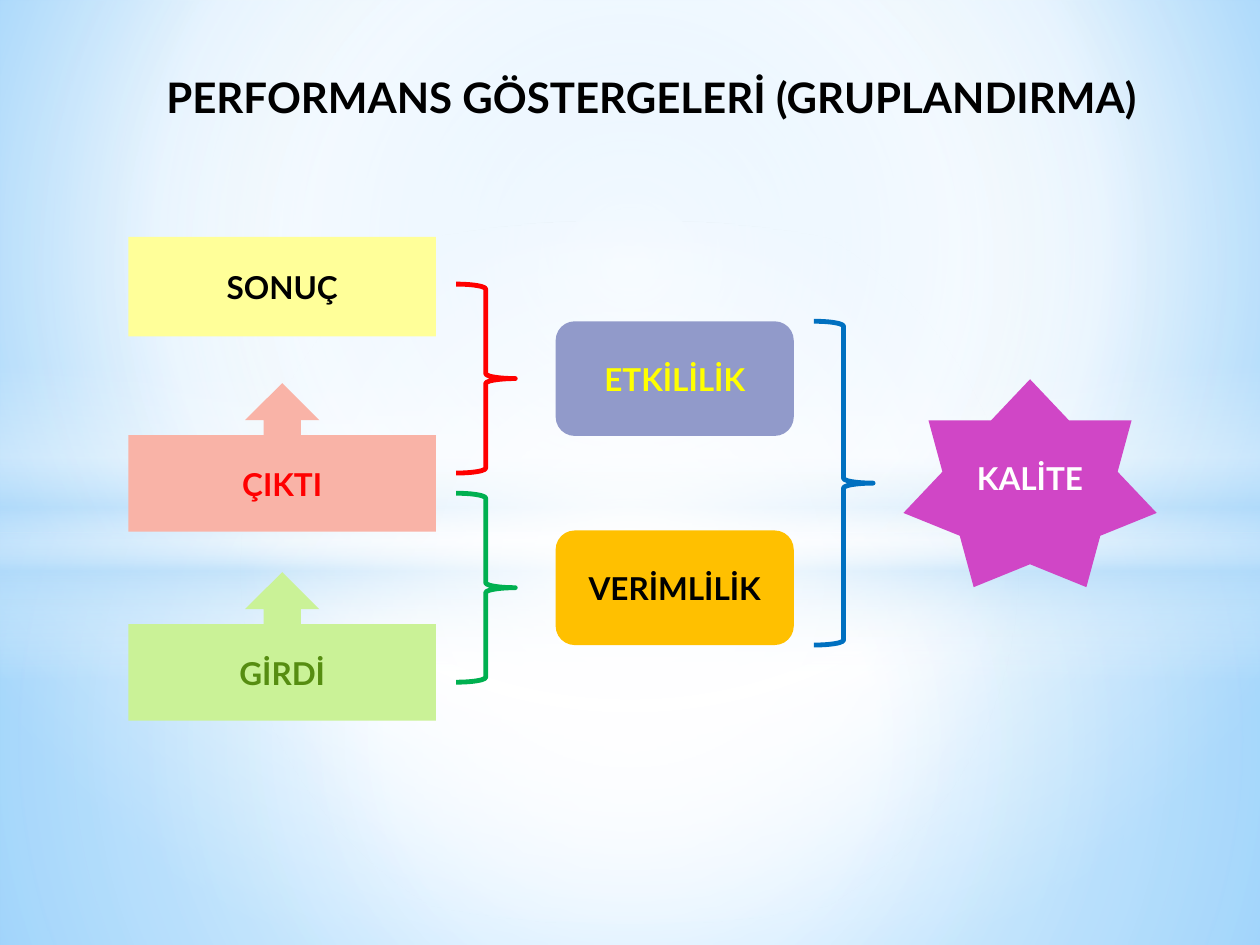
"""Build the slide that groups performance indicators into effectiveness, efficiency and quality."""
from lxml import etree
from pptx import Presentation
from pptx.dml.color import RGBColor
from pptx.enum.shapes import MSO_SHAPE
from pptx.enum.text import MSO_ANCHOR, PP_ALIGN
from pptx.oxml.ns import qn
from pptx.util import Inches, Pt

RECT, OVAL, ROUNDED = MSO_SHAPE.RECTANGLE, MSO_SHAPE.OVAL, MSO_SHAPE.ROUNDED_RECTANGLE
CALLOUT, BRACE, STAR = MSO_SHAPE.UP_ARROW_CALLOUT, MSO_SHAPE.RIGHT_BRACE, MSO_SHAPE.STAR_7_POINT
CENTER, LEFT = PP_ALIGN.CENTER, PP_ALIGN.LEFT
MIDDLE = MSO_ANCHOR.MIDDLE

FONT = "Lato"
BLACK, WHITE = RGBColor(0, 0, 0), RGBColor(0xFF, 0xFF, 0xFF)
RED, YELLOW = RGBColor(0xFF, 0, 0), RGBColor(0xFF, 0xFF, 0)
BLUE, GREEN = RGBColor(0, 0x70, 0xC0), RGBColor(0, 0xB0, 0x50)
CREAM, SALMON = RGBColor(0xFF, 0xFF, 0x99), RGBColor(0xF9, 0xB3, 0xA7)
LIME, OLIVE = RGBColor(0xCA, 0xF2, 0x97), RGBColor(0x56, 0x8D, 0x11)
AMBER, LAVENDER = RGBColor(0xFF, 0xC0, 0), RGBColor(0x91, 0x9A, 0xCA)
MAGENTA = RGBColor(0xD0, 0x46, 0xC6)
SKY, PALE_SKY = RGBColor(0x9E, 0xD5, 0xFF), RGBColor(0xB4, 0xDC, 0xFA)
DEEP_SKY = RGBColor(0x5B, 0xB9, 0xFF)

WIDTH, HEIGHT = 10, 7.5
HORIZON = 4.23
CENTRE_FOCUS = (50, 50, 50, 50)

TITLE = "PERFORMANS GÖSTERGELERİ (GRUPLANDIRMA)"
BACKDROP = [(0, SKY, 100), (60, WHITE, 100), (100, DEEP_SKY, 100)]
BACKDROP_FOCUS = (20, 10, 20, 60)
# kind, top, height, stops as (position, colour, opacity), focus or None for a vertical blend
GLOWS = [
    (RECT, HORIZON, HEIGHT - HORIZON,
     [(0, WHITE, 91), (37, WHITE, 76), (100, PALE_SKY, 79)], CENTRE_FOCUS),
    (RECT, 0, HORIZON,
     [(0, WHITE, 89), (48, WHITE, 62), (100, PALE_SKY, 79)], CENTRE_FOCUS),
    (RECT, 2.9, 2.5,
     [(0, WHITE, 0), (29, WHITE, 30), (45, PALE_SKY, 40),
      (55, WHITE, 26), (65, PALE_SKY, 60), (100, WHITE, 0)], None),
    (OVAL, 1.75, 5.58, [(0, WHITE, 100), (54, WHITE, 0)], CENTRE_FOCUS),
]

STAGE_X, STAGE_W = 1.02, 2.44
STAGES = [
    ("GİRDİ", CALLOUT, 4.54, 1.18, LIME, OLIVE),
    ("ÇIKTI", CALLOUT, 3.04, 1.18, SALMON, RED),
    ("SONUÇ", RECT, 1.88, 0.79, CREAM, BLACK),
]
MEASURE_X, MEASURE_W, MEASURE_H = 4.41, 1.89, 0.91
MEASURES = [
    ("ETKİLİLİK", 2.55, LAVENDER, YELLOW, RED),
    ("VERİMLİLİK", 4.21, AMBER, BLACK, GREEN),
]
BRACE_W, STAGE_BRACE_X, STAGE_BRACE_H, QUALITY_BRACE_X = 0.47, 3.62, 1.5, 6.46
QUALITY, QUALITY_X, QUALITY_W, QUALITY_H = "KALİTE", 7.17, 2.01, 1.65


def blend(owner, stops, focus):
    gradient = owner.find(".//" + qn("a:gradFill"))
    for child in list(gradient):
        gradient.remove(child)
    stop_list = etree.SubElement(gradient, qn("a:gsLst"))
    for position, colour, opacity in stops:
        stop = etree.SubElement(stop_list, qn("a:gs"), pos=str(position * 1000))
        tint = etree.SubElement(stop, qn("a:srgbClr"), val=str(colour))
        if opacity < 100:
            etree.SubElement(tint, qn("a:alpha"), val=str(opacity * 1000))
    if focus:
        radial = etree.SubElement(gradient, qn("a:path"), path="circle")
        edges = {side: str(share * 1000) for side, share in zip("ltrb", focus)}
        etree.SubElement(radial, qn("a:fillToRect"), **edges)
    else:
        etree.SubElement(gradient, qn("a:lin"), ang="5400000", scaled="0")


def add_form(slide, kind, x, y, w, h):
    form = slide.shapes.add_shape(kind, Inches(x), Inches(y), Inches(w), Inches(h))
    form.shadow.inherit = False
    form.line.fill.background()
    return form


def write(form, words, size, colour, align):
    form.text_frame.text = words
    form.text_frame.vertical_anchor = MIDDLE
    paragraph = form.text_frame.paragraphs[0]
    paragraph.alignment = align
    font = paragraph.font
    font.name, font.size, font.bold = FONT, Pt(size), True
    font.color.rgb = colour


def add_label(slide, words, kind, box, fill, colour):
    form = add_form(slide, kind, *box)
    form.fill.solid()
    form.fill.fore_color.rgb = fill
    write(form, words, 18, colour, CENTER)


def add_brace(slide, x, y, h, colour):
    brace = add_form(slide, BRACE, x, y, BRACE_W, h)
    brace.fill.background()
    brace.line.color.rgb = colour
    brace.line.width = Pt(2.75)


def main():
    deck = Presentation()
    deck.slide_width, deck.slide_height = Inches(WIDTH), Inches(HEIGHT)
    slide = deck.slides.add_slide(deck.slide_layouts[5])

    slide.background.fill.gradient()
    blend(slide.element, BACKDROP, BACKDROP_FOCUS)
    for kind, top, height, stops, focus in GLOWS:
        glow = add_form(slide, kind, 0, top, WIDTH, height)
        glow.fill.gradient()
        blend(glow.element, stops, focus)

    for words, kind, top, height, fill, colour in STAGES:
        add_label(slide, words, kind, (STAGE_X, top, STAGE_W, height), fill, colour)
    for words, top, fill, colour, brace_colour in MEASURES:
        add_label(slide, words, ROUNDED, (MEASURE_X, top, MEASURE_W, MEASURE_H), fill, colour)
        brace_top = top + (MEASURE_H - STAGE_BRACE_H) / 2
        add_brace(slide, STAGE_BRACE_X, brace_top, STAGE_BRACE_H, brace_colour)

    first_top, last_top = MEASURES[0][1], MEASURES[-1][1]
    span = last_top + MEASURE_H - first_top
    add_brace(slide, QUALITY_BRACE_X, first_top, span, BLUE)
    quality_top = first_top + (span - QUALITY_H) / 2
    add_label(slide, QUALITY, STAR, (QUALITY_X, quality_top, QUALITY_W, QUALITY_H), MAGENTA, WHITE)

    title = slide.shapes.title
    title.left, title.top = Inches(1.22), Inches(0.52)
    title.width, title.height = Inches(8.43), Inches(0.5)
    write(title, TITLE, 24, BLACK, LEFT)
    slide.shapes.element.append(title.element)

    deck.save("out.pptx")


if __name__ == "__main__":
    main()
